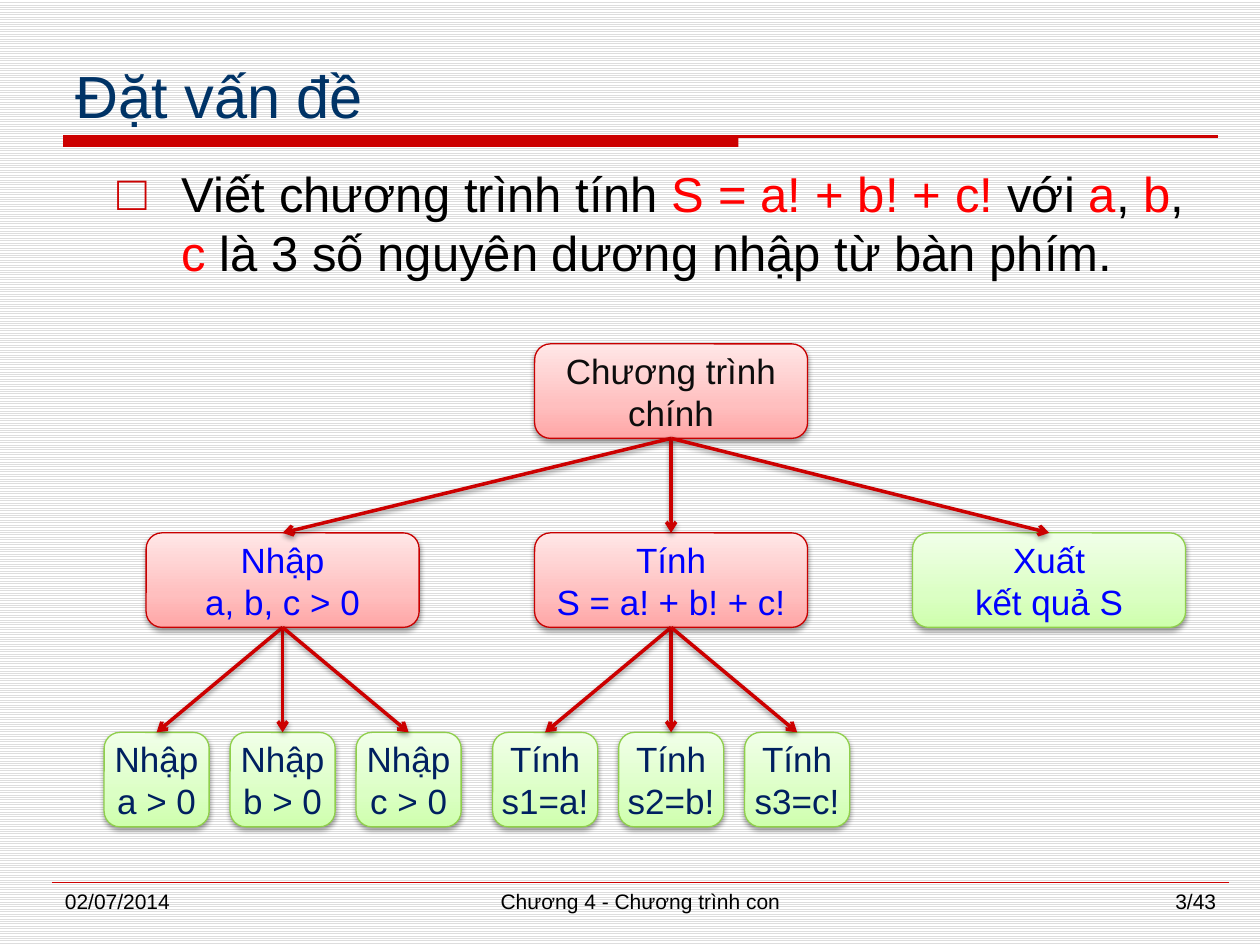
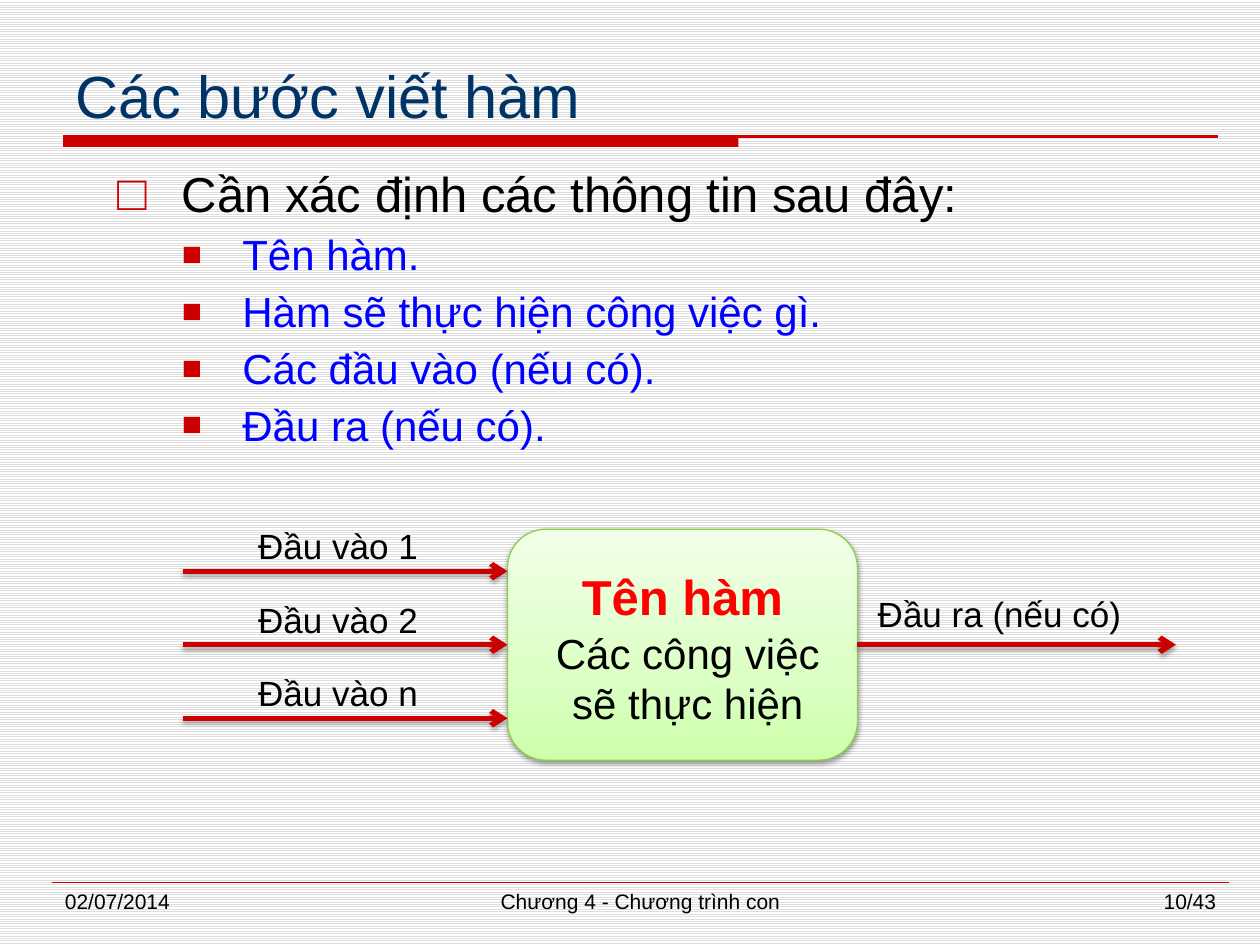
from collections import namedtuple
from copy import deepcopy

from lxml import etree
from pptx import Presentation
from pptx.dml.color import RGBColor
from pptx.enum import dml, shapes, text
from pptx.oxml import ns
from pptx.util import Pt

Box = namedtuple("Box", "left top width height")

FONT = "Arial"
CRIMSON = RGBColor(0xCC, 0x00, 0x00)
RED = RGBColor(0xFF, 0x00, 0x00)
BLUE = RGBColor(0x00, 0x00, 0xFF)
NAVY = RGBColor(0x00, 0x20, 0x60)
TITLE_BLUE = RGBColor(0x00, 0x33, 0x66)
BLACK = RGBColor(0x00, 0x00, 0x00)
CHARCOAL = RGBColor(0x0D, 0x0D, 0x0D)
WHITE = RGBColor(0xFF, 0xFF, 0xFF)
STRIPE = RGBColor(0xDD, 0xDD, 0xDD)
PINK_STOPS = [RGBColor(0xFF, 0xA5, 0xA5), RGBColor(0xFF, 0xBF, 0xBF), RGBColor(0xFF, 0xE7, 0xE7)]
GREEN_STOPS = [RGBColor(0xCE, 0xFF, 0xAC), RGBColor(0xDB, 0xFF, 0xC4), RGBColor(0xF1, 0xFF, 0xE9)]
PINK = (PINK_STOPS, RGBColor(0xC8, 0x00, 0x00))
GREEN = (GREEN_STOPS, RGBColor(0x8F, 0xCF, 0x4B))

TITLE_BOX = Box(36, 24, 660, 54)
BODY_BOX = Box(60, 90, 624, 408)
FOOTER_BOX = Box(30, 504, 672, 25)
TREE_BOX = Box(60, 196.5, 624, 276)
FUNCTION_BOX = Box(104.4, 302.4, 567.6, 132)

LEFT, CENTER = text.PP_ALIGN.LEFT, text.PP_ALIGN.CENTER
RIGHT, JUSTIFY = text.PP_ALIGN.RIGHT, text.PP_ALIGN.JUSTIFY
TOP_SIDE, LEFT_SIDE, BOTTOM_SIDE, RIGHT_SIDE = range(4)

BULLETS = [
    dict(char="□", size=28, before=5.6, indent=36.75, hanging=36.75, scale=100),
    dict(char="■", size=24, before=3.6, indent=71.25, hanging=34.5, scale=80),
]


def add_xml(parent, tag, **attributes):
    return etree.SubElement(parent, ns.qn(tag), attributes)


def set_font(paragraph, size, color, bold=False):
    font = paragraph.font
    font.name, font.size, font.bold = FONT, Pt(size), bold
    font.color.rgb = color


def write(frame, words, size, color, align=LEFT, bold=False):
    frame.text = words
    for paragraph in frame.paragraphs:
        paragraph.alignment = align
        set_font(paragraph, size, color, bold)


def add_label(page, box, words, size, align=LEFT, wrap=False):
    label = page.shapes.add_textbox(*map(Pt, box))
    label.text_frame.word_wrap = wrap
    write(label.text_frame, words, size, BLACK, align)


def set_shadow(item, opacity=None, distance=1.6):
    effects = add_xml(item._element.spPr, "a:effectLst")
    if opacity:
        shadow = add_xml(effects, "a:outerShdw", blurRad=str(Pt(3.1)),
                         dist=str(Pt(distance)), dir="5400000", rotWithShape="0")
        color = add_xml(shadow, "a:srgbClr", val=str(BLACK))
        add_xml(color, "a:alpha", val=str(opacity * 1000))


def add_line(page, start, end, width):
    line = page.shapes.add_connector(shapes.MSO_CONNECTOR.STRAIGHT, *map(Pt, start + end))
    line.line.color.rgb = CRIMSON
    line.line.width = Pt(width)
    return line


def add_arrow(page, start, end, width, opacity=38, distance=1.6):
    arrow = add_line(page, start, end, width)
    add_xml(arrow.line._get_or_add_ln(), "a:tailEnd", type="arrow")
    set_shadow(arrow, opacity, distance)
    return arrow


def add_node(page, box, words, look, size, color, bold=False):
    stops, outline = look
    node = page.shapes.add_shape(shapes.MSO_SHAPE.ROUNDED_RECTANGLE, *map(Pt, box))
    node.fill.gradient()
    node.fill.gradient_angle = 90
    stop_list = node._element.spPr.find(".//" + ns.qn("a:gsLst"))
    stop_list.insert(1, deepcopy(stop_list[0]))
    for stop, position, stop_color in zip(node.fill.gradient_stops, (0, 0.35, 1), stops):
        stop.position = position
        stop.color.rgb = stop_color
    node.line.color.rgb = outline
    node.line.width = Pt(0.75)
    set_shadow(node, 38)
    node.text_frame.word_wrap = False
    node.text_frame.vertical_anchor = text.MSO_ANCHOR.MIDDLE
    write(node.text_frame, words, size, color, CENTER, bold)
    return node


def place(holder, box):
    holder.left, holder.top, holder.width, holder.height = map(Pt, box)
    holder.text_frame.auto_size = text.MSO_AUTO_SIZE.NONE


def add_title(page, box, words):
    title = page.shapes.title
    place(title, box)
    title.text_frame.vertical_anchor = text.MSO_ANCHOR.BOTTOM
    write(title.text_frame, words, 34, TITLE_BLUE)
    bottom = box.top + box.height
    band = page.shapes.add_shape(shapes.MSO_SHAPE.RECTANGLE,
                                 *map(Pt, (box.left, bottom, 386, 6)))
    band.fill.solid()
    band.fill.fore_color.rgb = CRIMSON
    band.line.fill.background()
    band.shadow.inherit = False
    set_shadow(add_line(page, (box.left, bottom), (box.left + box.width, bottom), 1.5))


def add_footer(page, box, number):
    right = box.left + box.width
    set_shadow(add_line(page, (box.left, box.top), (right, box.top), 0.25))
    parts = [
        (box.left, 156, "02/07/2014", LEFT),
        (box.left + 180, 312, "Chương 4 - Chương trình con", CENTER),
        (right - 156, 156, number, RIGHT),
    ]
    for left, width, words, align in parts:
        add_label(page, Box(left, box.top, width, box.height), words, 12, align, wrap=True)


def set_bullet(paragraph, level):
    style = BULLETS[level]
    paragraph.level = level
    paragraph.alignment = JUSTIFY
    paragraph.space_before = Pt(style["before"])
    props = paragraph._p.get_or_add_pPr()
    props.set("marL", str(Pt(style["indent"])))
    props.set("indent", str(-Pt(style["hanging"])))
    add_xml(add_xml(props, "a:buClr"), "a:srgbClr", val=str(CRIMSON))
    add_xml(props, "a:buSzPct", val=str(style["scale"] * 1000))
    add_xml(props, "a:buFont", typeface=FONT)
    add_xml(props, "a:buChar", char=style["char"])


def add_body(page, box, items):
    body = page.placeholders[1]
    place(body, box)
    frame = body.text_frame
    for index, (level, color, spans) in enumerate(items):
        paragraph = frame.add_paragraph() if index else frame.paragraphs[0]
        set_bullet(paragraph, level)
        set_font(paragraph, BULLETS[level]["size"], color)
        for words, span_color in spans:
            span = paragraph.add_run()
            span.text = words
            if span_color != color:
                span.font.color.rgb = span_color


def add_tree(page, box):
    height, wide, narrow, leaf_step = 54, 156, 60, 72
    branch_top, leaf_top = 108, 222

    def node_at(center, top, width, words, look, color):
        spot = Box(box.left + center - width / 2, box.top + top, width, height)
        return add_node(page, spot, words, look, 20, color)

    def join(parent, child):
        arrow = add_arrow(page, (0, 0), (0, 0), 2)
        arrow.begin_connect(parent, BOTTOM_SIDE)
        arrow.end_connect(child, TOP_SIDE)

    branches = [
        (101.5, "Nhập\na, b, c > 0", PINK, ["Nhập\na > 0", "Nhập\nb > 0", "Nhập\nc > 0"]),
        (323.5, "Tính\nS = a! + b! + c!", PINK, ["Tính\ns1=a!", "Tính\ns2=b!", "Tính\ns3=c!"]),
        (539.5, "Xuất\nkết quả S", GREEN, []),
    ]
    root = node_at(323.5, 0, wide, "Chương trình\nchính", PINK, CHARCOAL)
    links = []
    for center, words, look, leaves in branches:
        branch = node_at(center, branch_top, wide, words, look, BLUE)
        links.append((root, branch))
        for index, leaf_words in enumerate(leaves):
            leaf_center = center + (index - 1) * leaf_step
            leaf = node_at(leaf_center, leaf_top, narrow, leaf_words, GREEN, NAVY)
            links.append((branch, leaf))
    for parent, child in links:
        join(parent, child)


def add_function_diagram(page, box):
    block_left, block_width, step = box.left + 185.6, 200, 42
    block_right, right = block_left + block_width, box.left + box.width
    middle = box.top + box.height / 2

    def add_flow(start, end):
        return add_arrow(page, start, end, 3, 35, 1.8)

    block = add_node(page, Box(block_left, box.top, block_width, box.height),
                     "Tên hàm", GREEN, 28, RED, bold=True)
    block.text_frame.vertical_anchor = text.MSO_ANCHOR.TOP
    block.text_frame.margin_top = Pt(15)
    add_label(page, Box(block_left + 19, box.top + 52.5, 168, 65.5),
              "Các công việc\nsẽ thực hiện", 24, CENTER, wrap=True)
    for index, words in enumerate(["Đầu vào 1", "Đầu vào 2", "Đầu vào n"]):
        level = middle + (index - 1) * step
        flow = add_flow((box.left, level), (block_left, level))
        if level == middle:
            flow.end_connect(block, LEFT_SIDE)
        add_label(page, Box(box.left + 36, level - 30, 106.5, 31.5), words, 20)
    result = add_flow((block_right, middle), (right, middle))
    result.begin_connect(block, RIGHT_SIDE)
    add_label(page, Box(block_right + 4.5, middle - 33.5, 155, 31.5), "Đầu ra (nếu có)", 20)


def add_page(deck, title, items, number):
    page = deck.slides.add_slide(deck.slide_layouts[1])
    add_title(page, TITLE_BOX, title)
    add_body(page, BODY_BOX, items)
    add_footer(page, FOOTER_BOX, number)
    return page


def set_background(deck):
    fill = deck.slide_master.background.fill
    fill.patterned()
    fill.pattern = dml.MSO_PATTERN.LIGHT_HORIZONTAL
    fill.fore_color.rgb = STRIPE
    fill.back_color.rgb = WHITE


def main():
    deck = Presentation()
    deck.slide_width, deck.slide_height = Pt(720), Pt(540)
    set_background(deck)

    problem = [
        ("Viết chương trình tính ", BLACK), ("S = a! + b! + c! ", RED), ("với ", BLACK),
        ("a", RED), (", ", BLACK), ("b", RED), (", ", BLACK), ("c", RED),
        (" là 3 số nguyên dương nhập từ bàn phím.", BLACK),
    ]
    page = add_page(deck, "Đặt vấn đề", [(0, BLACK, problem)], "3/43")
    add_tree(page, TREE_BOX)

    details = ["Tên hàm.", "Hàm sẽ thực hiện công việc gì.",
               "Các đầu vào (nếu có).", "Đầu ra (nếu có)."]
    steps = [(0, BLACK, [("Cần xác định các thông tin sau đây:", BLACK)])]
    steps += [(1, BLUE, [(words, BLUE)]) for words in details]
    page = add_page(deck, "Các bước viết hàm", steps, "10/43")
    add_function_diagram(page, FUNCTION_BOX)

    deck.save("out.pptx")


if __name__ == "__main__":
    main()
